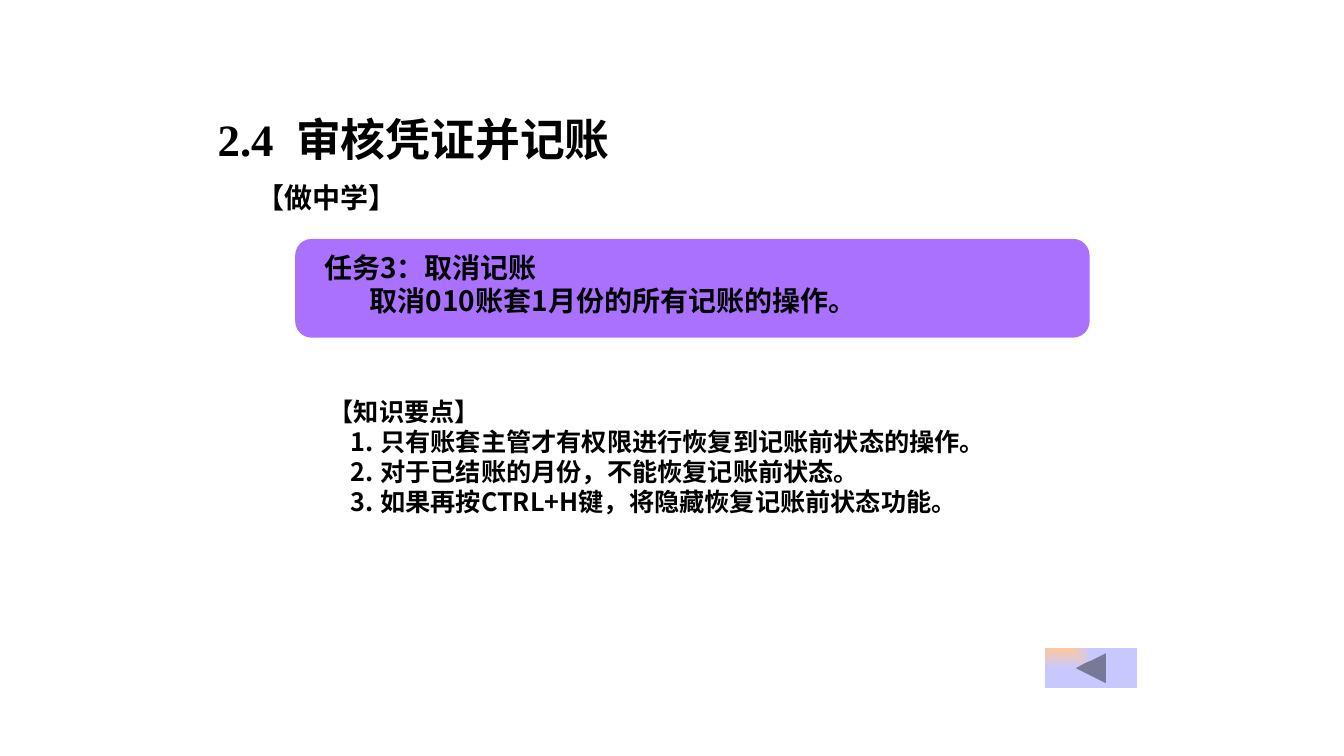
from lxml.etree import SubElement
from pptx import Presentation
from pptx.dml.color import RGBColor
from pptx.enum.shapes import MSO_SHAPE
from pptx.enum.text import MSO_ANCHOR, MSO_AUTO_SIZE, PP_ALIGN
from pptx.oxml.ns import qn
from pptx.util import Cm, Pt

COLORS = {
    "text": "000000",
    "task": "AA71FF",
    "button_corner": "FFC89B",
    "button": "C8C8FF",
}
SANS = "Noto Sans CJK SC"
SERIF = "Times New Roman"
KEY_POINTS = [
    "只有账套主管才有权限进行恢复到记账前状态的操作。",
    "对于已结账的月份，不能恢复记账前状态。",
    "如果再按CTRL+H键，将隐藏恢复记账前状态功能。",
]


def place(shape, left, top, width, height):
    shape.left, shape.top = Cm(left), Cm(top)
    shape.width, shape.height = Cm(width), Cm(height)


def prepare_frame(shape, anchor=MSO_ANCHOR.TOP, wrap=True):
    frame = shape.text_frame
    frame.auto_size = MSO_AUTO_SIZE.NONE
    frame.word_wrap = wrap
    frame.vertical_anchor = anchor
    return frame


def write_paragraph(paragraph, text, size, font=SANS, indent=0, hanging=0, numbered=False):
    """Write one bold line; lengths in centimetres, numbered gives 1. 2. 3."""
    paragraph.alignment = PP_ALIGN.LEFT
    paragraph.space_before = Pt(0)
    paragraph.line_spacing = Pt(size * 1.19)
    properties = paragraph._p.get_or_add_pPr()
    properties.set("marL", str(Cm(indent)))
    properties.set("indent", str(-Cm(hanging)))
    if numbered:
        SubElement(properties, qn("a:buFont"), typeface=font)
        SubElement(properties, qn("a:buAutoNum"), type="arabicPeriod")
    else:
        SubElement(properties, qn("a:buNone"))
    run = paragraph.add_run()
    run.text = text
    run.font.name = font
    run.font.size = Pt(size)
    run.font.bold = True
    run.font.color.rgb = RGBColor.from_string(COLORS["text"])
    SubElement(run._r.get_or_add_rPr(), qn("a:ea"), typeface=SANS)


def add_plain_shape(slide, kind, left, top, width, height):
    shape = slide.shapes.add_shape(kind, Cm(left), Cm(top), Cm(width), Cm(height))
    shape.shadow.inherit = False
    shape.line.fill.background()
    return shape


def add_text_box(slide, left, top, width, height, **frame_format):
    box = slide.shapes.add_textbox(Cm(left), Cm(top), Cm(width), Cm(height))
    return prepare_frame(box, **frame_format)


def fill_from_corner(shape, corner_color, color):
    """Fill with a rectangular gradient that starts at the top left corner."""
    shape.fill.gradient()
    for stop, name in zip(shape.fill.gradient_stops, (corner_color, color)):
        stop.color.rgb = RGBColor.from_string(COLORS[name])
    gradient = shape._element.spPr.find(qn("a:gradFill"))
    gradient.remove(gradient.find(qn("a:lin")))
    rectangle = SubElement(gradient, qn("a:path"), path="rect")
    SubElement(rectangle, qn("a:fillToRect"), r="100000", b="100000")


def add_task(slide):
    panel = add_plain_shape(slide, MSO_SHAPE.ROUNDED_RECTANGLE, 7.44, 6.02, 20.02, 2.49)
    panel.fill.solid()
    panel.fill.fore_color.rgb = RGBColor.from_string(COLORS["task"])
    frame = add_text_box(slide, 7.92, 6.2, 18.9, 1.96)
    write_paragraph(frame.paragraphs[0], "任务3：取消记账", 20)
    write_paragraph(frame.add_paragraph(), "取消010账套1月份的所有记账的操作。", 20, indent=1.15)


def add_key_points(body):
    place(body, 8.03, 9.83, 19.2, 3.33)
    frame = prepare_frame(body, anchor=MSO_ANCHOR.MIDDLE)
    write_paragraph(frame.paragraphs[0], "【知识要点】", 18)
    for point in KEY_POINTS:
        write_paragraph(frame.add_paragraph(), point, 18,
                        indent=1.3, hanging=0.74, numbered=True)


def main():
    presentation = Presentation()
    presentation.slide_width, presentation.slide_height = Cm(33.87), Cm(19.05)
    slide = presentation.slides.add_slide(presentation.slide_layouts[1])
    title, body = slide.placeholders

    place(title, 5.23, 2.7, 22.6, 1.63)
    title_line = prepare_frame(title).paragraphs[0]
    write_paragraph(title_line, "2.4  审核凭证并记账", 32, font=SERIF,
                    indent=0.95, hanging=0.95)

    label = add_text_box(slide, 6.22, 4.42, 4.06, 1.12, anchor=MSO_ANCHOR.MIDDLE, wrap=False)
    write_paragraph(label.paragraphs[0], "【做中学】", 20, font=SERIF)
    add_task(slide)
    add_key_points(body)

    back_button = add_plain_shape(
        slide, MSO_SHAPE.ACTION_BUTTON_BACK_OR_PREVIOUS, 26.34, 16.33, 2.31, 1.02)
    fill_from_corner(back_button, "button_corner", "button")
    presentation.save("out.pptx")


if __name__ == "__main__":
    main()
